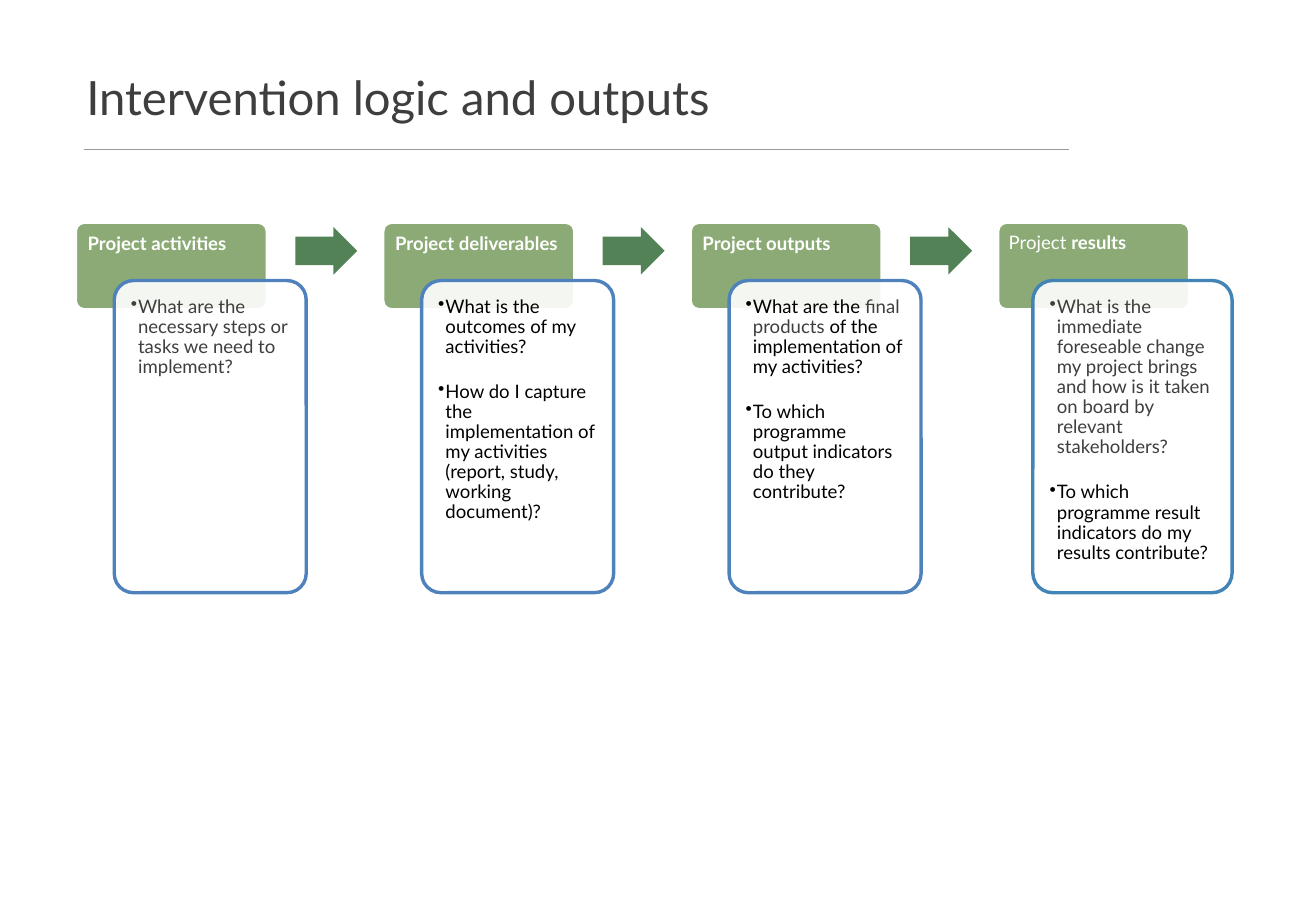
from lxml.etree import SubElement
from pptx import Presentation
from pptx.dml.color import RGBColor
from pptx.enum.shapes import MSO_CONNECTOR, MSO_SHAPE
from pptx.enum.text import MSO_ANCHOR, PP_ALIGN
from pptx.oxml.ns import qn
from pptx.util import Inches, Pt

WHITE = RGBColor(0xFF, 0xFF, 0xFF)
BLACK = RGBColor(0x00, 0x00, 0x00)
GREY = RGBColor(0x3F, 0x3E, 0x3E)
SAGE = RGBColor(0x8B, 0xAA, 0x76)
GREEN = RGBColor(0x53, 0x82, 0x57)
BLUE = RGBColor(0x4F, 0x81, 0xBD)
TEAL = RGBColor(0x42, 0x84, 0xB5)
RULE_GREY = RGBColor(0x9A, 0x9A, 0x9A)


def write(frame, paragraphs, size=11, bold=False, bullet=False, spacing=0.9,
          gap=0, anchor=MSO_ANCHOR.TOP, insets=(0.09, 0.09, 0.09, 0.09)):
    """Fill a frame; each paragraph is a list of (text, colour) runs."""
    frame.word_wrap = True
    frame.vertical_anchor = anchor
    (frame.margin_left, frame.margin_top,
     frame.margin_right, frame.margin_bottom) = map(Inches, insets)
    for i, runs in enumerate(paragraphs):
        paragraph = frame.add_paragraph() if i else frame.paragraphs[0]
        paragraph.alignment = PP_ALIGN.LEFT
        paragraph.line_spacing = spacing
        if i:
            paragraph.space_before = Pt(gap)
        if bullet:
            properties = paragraph._p.get_or_add_pPr()
            properties.set("marL", str(Inches(0.06)))
            properties.set("indent", str(Inches(-0.06)))
            SubElement(properties, qn("a:buChar")).set("char", "•")
        for text, colour in runs:
            run = paragraph.add_run()
            run.text = text
            run.font.name = "Lato"
            run.font.size = Pt(size)
            run.font.bold = bold
            run.font.color.rgb = colour


def add_block(kind, box, fill, line=None, adjustments=(0.1,)):
    block = slide.shapes.add_shape(kind, *map(Inches, box))
    block.shadow.inherit = False
    for i, value in enumerate(adjustments):
        block.adjustments[i] = value
    block.fill.solid()
    block.fill.fore_color.rgb = fill
    if line is None:
        block.line.fill.background()
    else:
        block.line.color.rgb = line
        block.line.width = Pt(2)
    return block


prs = Presentation()
prs.slide_width, prs.slide_height = Inches(10.83), Inches(7.5)
slide = prs.slides.add_slide(prs.slide_layouts[5])

# Title and the rule below it
title = slide.shapes.title
title.left, title.top = Inches(0.61), Inches(0.13)
title.width, title.height = Inches(7.62), Inches(0.95)
write(title.text_frame, [[("Intervention logic and outputs", GREY)]], size=28,
      spacing=1, anchor=MSO_ANCHOR.BOTTOM, insets=(0.1, 0.05, 0.1, 0.05))

rule = slide.shapes.add_connector(MSO_CONNECTOR.STRAIGHT, Inches(0.69),
                                  Inches(1.23), Inches(8.8), Inches(1.23))
rule.line.color.rgb = RULE_GREY
rule.line.width = Pt(0.5)
SubElement(rule._element.spPr, qn("a:effectLst"))

# Stages: heading, questions, panel offset, panel width, panel outline
stages = [
    ("Project activities",
     [[("What are the necessary steps or tasks we need to implement?", GREY)]],
     0.32, 1.58, BLUE),
    ("Project deliverables",
     [[("What is the outcomes of my activities?", BLACK)],
      [("How do I capture the implementation of my activities "
        "(report, study, working document)?", BLACK)]],
     0.32, 1.58, BLUE),
    ("Project outputs",
     [[("What are the ", BLACK), ("final products ", GREY),
       ("of the implementation of my activities?", BLACK)],
      [("To which programme output indicators do they contribute?", BLACK)]],
     0.32, 1.58, BLUE),
    ("Project results",
     [[("What is the immediate foreseable change my project brings and how "
        "is it taken on board by relevant stakeholders?", GREY)],
      [("To which programme result indicators do my results contribute?",
        BLACK)]],
     0.29, 1.64, TEAL),
]
STEP = 2.53

for i, (heading, questions, offset, width, outline) in enumerate(stages):
    left = 0.62 + i * STEP
    is_last = i == len(stages) - 1

    # Heading tab; the last one has only its second word in bold
    tab = add_block(MSO_SHAPE.ROUNDED_RECTANGLE, (left, 1.83, 1.58, 0.72),
                    SAGE, WHITE)
    if is_last:
        first, second = heading.split()
        write(tab.text_frame, [[(first + " ", WHITE), (second, WHITE)]],
              insets=(0.07, 0.07, 0.07, 0.05))
        tab.text_frame.paragraphs[0].runs[1].font.bold = True
    else:
        write(tab.text_frame, [[(heading, WHITE)]], bold=True,
              insets=(0.08, 0.08, 0.07, 0.05))

    # Question panel, slightly see-through over the tab
    panel = add_block(MSO_SHAPE.ROUNDED_RECTANGLE,
                      (left + offset, 2.31, width, 2.57), WHITE, outline)
    panel_colour = panel._element.spPr.find(qn("a:solidFill"))[0]
    SubElement(panel_colour, qn("a:alpha")).set("val", "90000")
    write(panel.text_frame, questions, bullet=True, gap=15)

    # Arrow to the next stage
    if not is_last:
        add_block(MSO_SHAPE.RIGHT_ARROW, (left + 1.81, 1.87, 0.51, 0.39),
                  GREEN, adjustments=(0.6, 0.5))

prs.save("out.pptx")
